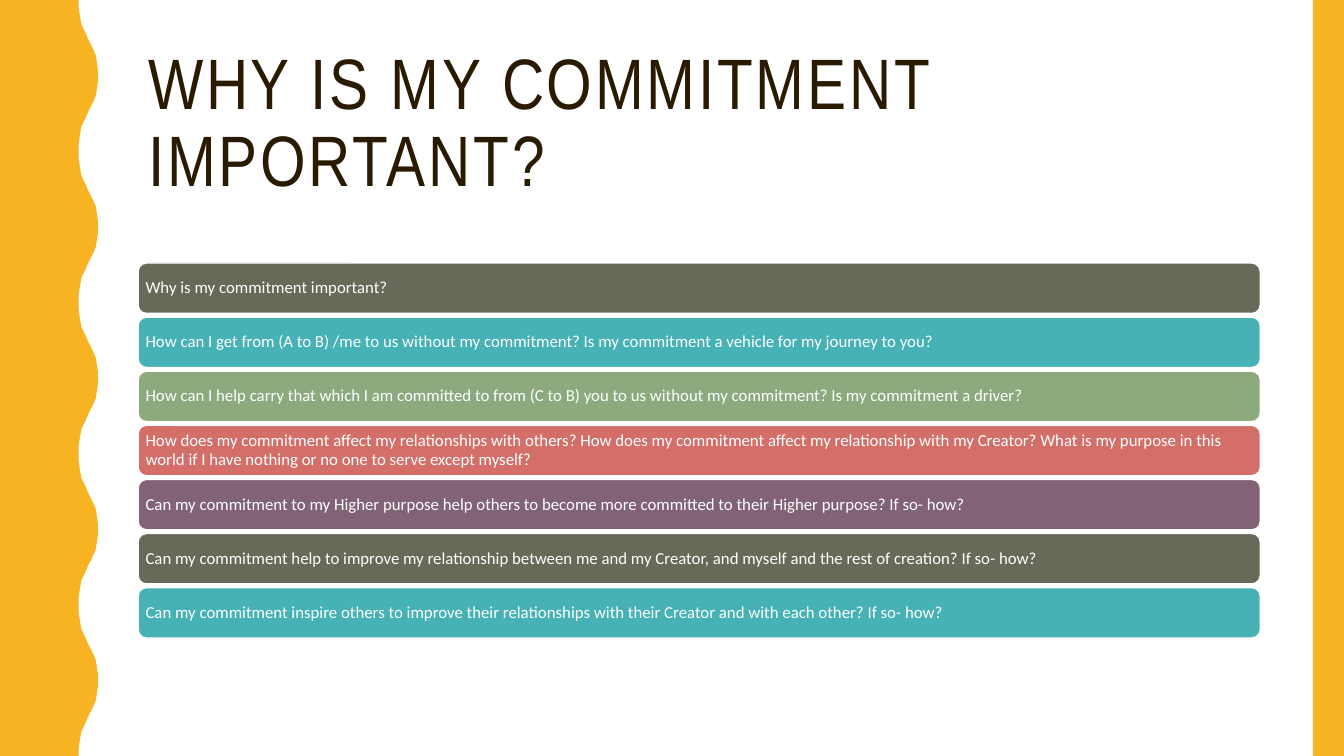
from dataclasses import dataclass

from pptx import Presentation
from pptx.dml.color import RGBColor
from pptx.enum.shapes import MSO_SHAPE
from pptx.enum.text import MSO_ANCHOR, PP_ALIGN
from pptx.util import Inches, Pt


@dataclass(frozen=True)
class Theme:
    """Colours, fonts and type sizes of the slide."""
    white: RGBColor = RGBColor.from_string("FFFFFF")
    ink: RGBColor = RGBColor.from_string("2A1A00")
    accent: RGBColor = RGBColor.from_string("F8B323")
    bars: tuple = tuple(map(RGBColor.from_string, (
        "656A59", "46B2B5", "8CAA7E", "D36F68", "826276")))
    title_font: str = "Arial Narrow"
    body_font: str = "Calibri"
    title_size: Pt = Pt(51)
    body_size: Pt = Pt(12)
    title_tracking: int = 200


THEME = Theme()
SLIDE_WIDTH, SLIDE_HEIGHT = 13.33, 7.5
WAVE_PERIOD = 1.5
HALF_WAVE = (
    (0.78, 0), (0.78, 0.07), (0.79, 0.14), (0.8, 0.2), (0.81, 0.25),
    (0.83, 0.29), (0.85, 0.33), (0.87, 0.38), (0.89, 0.42), (0.91, 0.46),
    (0.93, 0.5), (0.95, 0.55), (0.96, 0.61), (0.97, 0.68), (0.97, 0.75),
)
TITLE = "WHY IS MY COMMITMENT IMPORTANT?"
QUESTIONS = (
    "Why is my commitment important?",
    "How can I get from (A to B) /me to us without my commitment? "
    "Is my commitment a vehicle for my journey to you?",
    "How can I help carry that which I am committed to from (C to B) "
    "you to us without my commitment? Is my commitment a driver?",
    "How does my commitment affect my relationships with others? "
    "How does my commitment affect my relationship with my Creator? "
    "What is my purpose in this world if I have nothing or no one "
    "to serve except myself?",
    "Can my commitment to my Higher purpose help others to become "
    "more committed to their Higher purpose? If so- how?",
    "Can my commitment help to improve my relationship between me and "
    "my Creator, and myself and the rest of creation? If so- how?",
    "Can my commitment inspire others to improve their relationships "
    "with their Creator and with each other? If so- how?",
)


def apply(target, values):
    """Set every attribute in values on target."""
    for name, value in values.items():
        setattr(target, name, value)


def paint(shape, color, outline=None):
    """Give a shape a flat fill and an optional one-point outline."""
    shape.shadow.inherit = False
    shape.fill.solid()
    shape.fill.fore_color.rgb = color
    if outline is None:
        shape.line.fill.background()
    else:
        shape.line.color.rgb = outline
        shape.line.width = Pt(1)


def write(shape, text, font, color, margins):
    """Fill a shape with one left-aligned, vertically centred paragraph."""
    frame = shape.text_frame
    apply(frame, {"word_wrap": True, "vertical_anchor": MSO_ANCHOR.MIDDLE, **margins})
    paragraph = frame.paragraphs[0]
    apply(paragraph, {"alignment": PP_ALIGN.LEFT, "line_spacing": 0.9})
    run = paragraph.add_run()
    run.text = text
    apply(run.font, font)
    run.font.color.rgb = color
    return run


def add_wavy_edge(slide, left, top, height):
    """Draw the left band, whose right edge repeats a mirrored half wave."""
    falling = [(x, WAVE_PERIOD - y) for x, y in reversed(HALF_WAVE[1:-1])]
    wave = [*HALF_WAVE, *falling]
    edge = [(x, y + period * WAVE_PERIOD)
            for period in range(round(height / WAVE_PERIOD)) for x, y in wave]
    outline = [*edge, (HALF_WAVE[0][0], height), (0, height)]
    builder = slide.shapes.build_freeform(Inches(left), Inches(top), scale=1.0)
    builder.add_line_segments(
        [(Inches(left + x), Inches(top + y)) for x, y in outline], close=True)
    paint(builder.convert_to_shape(), THEME.accent)


def add_side_band(slide, left, top, width, height):
    """Draw the plain band on the right."""
    band = slide.shapes.add_shape(
        MSO_SHAPE.RECTANGLE, Inches(left), Inches(top), Inches(width), Inches(height))
    paint(band, THEME.accent)


def add_title(slide, left, top, width, height):
    """Place the letter-spaced heading."""
    title = slide.shapes.add_textbox(
        Inches(left), Inches(top), Inches(width), Inches(height))
    font = {"name": THEME.title_font, "size": THEME.title_size}
    run = write(title, TITLE, font, THEME.ink, {})
    run.font._element.set("spc", str(THEME.title_tracking))


def add_questions(slide, left, top, width, height, bar_height=0.5):
    """Stack the question bars evenly, cycling through the bar colours."""
    pitch = (height - bar_height) / (len(QUESTIONS) - 1)
    font = {"name": THEME.body_font, "size": THEME.body_size}
    margins = {f"margin_{side}": Inches(0.05)
               for side in ("left", "top", "right", "bottom")}
    for index, question in enumerate(QUESTIONS):
        bar = slide.shapes.add_shape(
            MSO_SHAPE.ROUNDED_RECTANGLE, Inches(left), Inches(top + index * pitch),
            Inches(width), Inches(bar_height))
        paint(bar, THEME.bars[index % len(THEME.bars)], THEME.white)
        write(bar, question, font, THEME.white, margins)


def main():
    """Build and save the slide."""
    presentation = Presentation()
    apply(presentation, {"slide_width": Inches(SLIDE_WIDTH),
                         "slide_height": Inches(SLIDE_HEIGHT)})
    slide = presentation.slides.add_slide(presentation.slide_layouts[6])
    slide.background.fill.solid()
    slide.background.fill.fore_color.rgb = THEME.white
    add_title(slide, 1.37, 0.42, 11.13, 1.63)
    add_wavy_edge(slide, 0, 0, SLIDE_HEIGHT)
    add_side_band(slide, 13.02, 0, 0.31, SLIDE_HEIGHT)
    add_questions(slide, 1.37, 2.61, 11.13, 3.72)
    presentation.save("out.pptx")


if __name__ == "__main__":
    main()
